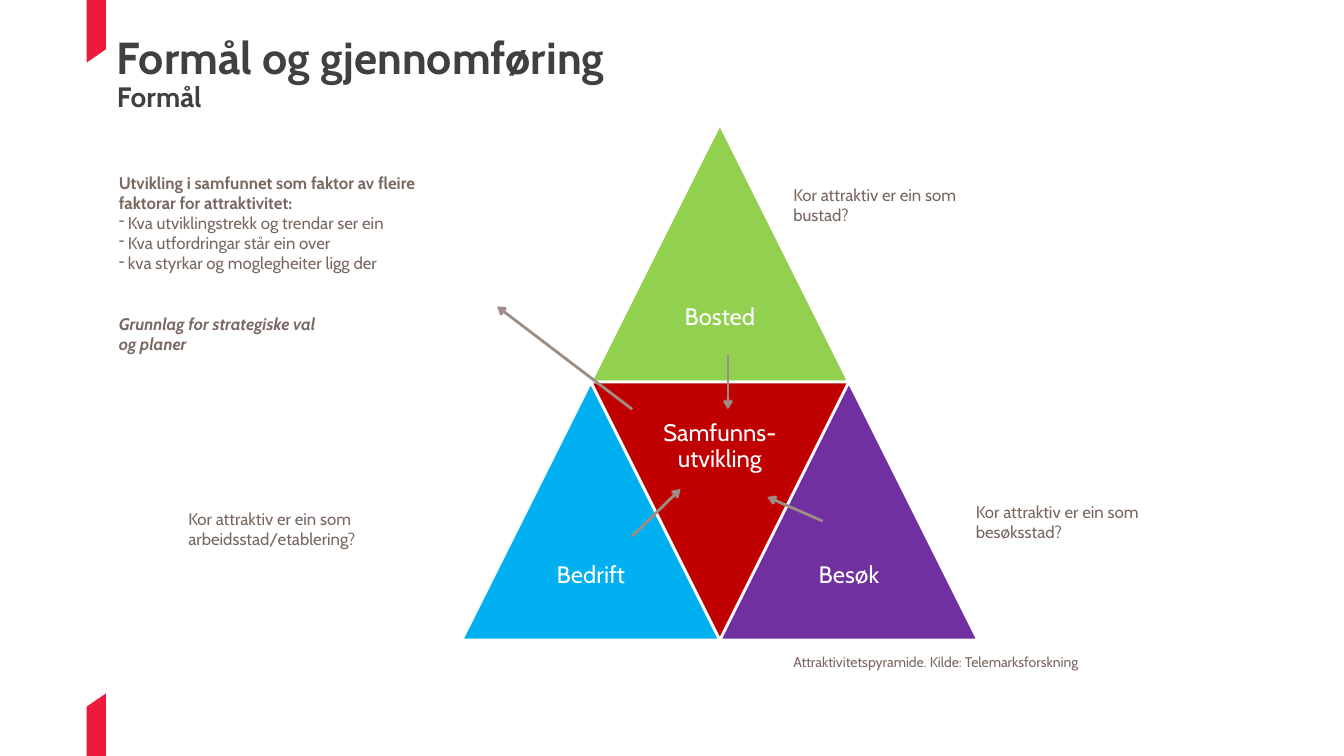
from lxml.etree import SubElement
from pptx import Presentation
from pptx.dml.color import RGBColor
from pptx.enum.shapes import MSO_CONNECTOR, MSO_SHAPE
from pptx.enum.text import MSO_ANCHOR as ANCHOR, MSO_AUTO_SIZE as FIT, PP_ALIGN as ALIGN
from pptx.oxml.ns import qn
from pptx.util import Inches, Pt

TITLE = [("Formål og gjennomføring", 32), ("Formål", 20)]

# label, column and row in half-triangle steps, fill, points down
PYRAMID = [
    ("Bosted", 1, 0, "92D050", False),
    ("Bedrift", 0, 1, "00B0F0", False),
    ("Samfunns-utvikling", 1, 1, "C00000", True),
    ("Besøk", 2, 1, "7030A0", False),
]
QUESTIONS = [
    ("Kor attraktiv er ein som bustad?", 7.77, 1.78, 2.18),
    ("Kor attraktiv er ein som arbeidsstad/etablering?", 1.77, 5.0, 2.53),
    ("Kor attraktiv er ein som besøksstad?", 9.58, 4.93, 2.05),
]
SOURCE = "Attraktivitetspyramide. Kilde: Telemarksforskning"
# text, font format, bulleted, space before
FACTORS = [
    ("Utvikling i samfunnet som faktor av fleire faktorar for attraktivitet:",
     {"bold": True}, False, 0),
    ("Kva utviklingstrekk og trendar ser ein", {}, True, 0),
    ("Kva utfordringar står ein over", {}, True, 0),
    ("kva styrkar og moglegheiter ligg der", {}, True, 0),
    ("Grunnlag for strategiske val", {"bold": True, "italic": True}, False, 29),
    ("og planer", {"bold": True, "italic": True}, False, 0),
]
ARROWS = [
    (6.27, 4.06, 4.93, 3.04),
    (8.16, 5.17, 7.61, 4.93),
    (6.27, 5.32, 6.75, 4.85),
    (7.22, 3.51, 7.22, 4.06),
]
RIBBONS = [
    [(0.86, 0), (1.05, 0), (1.05, 0.49), (0.86, 0.62)],
    [(1.05, 7.5), (0.86, 7.5), (0.86, 7.01), (1.05, 6.88)],
]
THEME = {
    "font": "Cabin", "title": "404040", "body": "786860", "white": "FFFFFF",
    "arrow": "9D8D85", "ribbon": "ED1A3B",
    "label_size": 17, "body_size": 12, "source_size": 10, "stroke": 2,
}
SIDE, LEFT, TOP = 2.56, 4.58, 1.23


def rgb(name):
    return RGBColor.from_string(THEME.get(name, name))


def style(font, size, color, **extra):
    values = {"name": THEME["font"], "size": Pt(size), **extra}
    for key, value in values.items():
        setattr(font, key, value)
    font.color.rgb = rgb(color)


def add_text(slide, box, lines, size, color="body", **frame):
    """Add a text box; lines are (text, font format, bulleted, space before)."""
    tf = slide.shapes.add_textbox(*map(Inches, box)).text_frame
    for key, value in {"word_wrap": True, "auto_size": FIT.NONE, **frame}.items():
        setattr(tf, key, value)
    for i, (text, fmt, bulleted, before) in enumerate(lines):
        p = tf.add_paragraph() if i else tf.paragraphs[0]
        if bulleted:
            pPr = p._p.get_or_add_pPr()
            pPr.set("marL", str(Inches(0.09)))
            pPr.set("indent", str(Inches(-0.09)))
            SubElement(pPr, qn("a:buChar")).set("char", "-")
        if before:
            p.space_before = Pt(before)
        r = p.add_run()
        r.text = text
        style(r.font, size, color, **fmt)
    return tf


def add_title(slide):
    sp = slide.shapes.title
    sp.left, sp.top, sp.width, sp.height = map(Inches, (1.16, 0.36, 8.5, 0.83))
    tf = sp.text_frame
    tf.margin_left = tf.margin_top = tf.margin_right = tf.margin_bottom = 0
    tf.vertical_anchor, tf.word_wrap, tf.auto_size = ANCHOR.TOP, True, FIT.NONE
    p = tf.paragraphs[0]
    p.alignment, p.line_spacing = ALIGN.LEFT, 0.88
    for i, (text, size) in enumerate(TITLE):
        if i:
            p.add_line_break()
        r = p.add_run()
        r.text = text
        style(r.font, size, "title", bold=True)


def add_ribbon(slide, points):
    corners = [(Inches(x), Inches(y)) for x, y in points]
    builder = slide.shapes.build_freeform(*corners[0])
    builder.add_line_segments(corners[1:], close=True)
    sp = builder.convert_to_shape()
    sp.shadow.inherit = False
    sp.fill.solid()
    sp.fill.fore_color.rgb = rgb("ribbon")
    sp.line.fill.background()


def add_triangle(slide, label, col, row, fill, down):
    x, y = LEFT + col * SIDE / 2, TOP + row * SIDE
    sp = slide.shapes.add_shape(MSO_SHAPE.ISOSCELES_TRIANGLE,
                                *map(Inches, (x, y, SIDE, SIDE)))
    sp.shadow.inherit = False
    sp.rotation = 180 if down else 0
    sp.fill.solid()
    sp.fill.fore_color.rgb = rgb(fill)
    sp.line.color.rgb = rgb("white")
    sp.line.width = Pt(THEME["stroke"])
    half, pad = SIDE / 2, Inches(0.07)
    box = (x + half / 2, y if down else y + half, half, half)
    tf = add_text(slide, box, [(label, {}, False, 0)], THEME["label_size"], "white",
                  vertical_anchor=ANCHOR.MIDDLE, margin_left=pad, margin_right=pad,
                  margin_top=pad, margin_bottom=pad)
    p = tf.paragraphs[0]
    p.alignment, p.line_spacing = ALIGN.CENTER, 0.9


def add_arrow(slide, ends):
    cxn = slide.shapes.add_connector(MSO_CONNECTOR.STRAIGHT, *map(Inches, ends))
    cxn.line.color.rgb = rgb("arrow")
    cxn.line.width = Pt(THEME["stroke"])
    SubElement(cxn.line._get_or_add_ln(), qn("a:tailEnd")).set("type", "arrow")
    SubElement(cxn._element.spPr, qn("a:effectLst"))


def main():
    prs = Presentation()
    prs.slide_width, prs.slide_height = Inches(13.33), Inches(7.5)
    slide = prs.slides.add_slide(prs.slide_layouts[5])
    for points in RIBBONS:
        add_ribbon(slide, points)
    add_title(slide)
    for part in PYRAMID:
        add_triangle(slide, *part)
    add_text(slide, (7.77, 6.43, 3.45, 0.27), [(SOURCE, {}, False, 0)],
             THEME["source_size"])
    for text, x, y, width in QUESTIONS:
        add_text(slide, (x, y, width, 0.5), [(text, {}, False, 0)], THEME["body_size"])
    add_text(slide, (1.08, 1.66, 3.69, 2.12), FACTORS, THEME["body_size"])
    for ends in ARROWS:
        add_arrow(slide, ends)
    prs.save("out.pptx")


if __name__ == "__main__":
    main()
